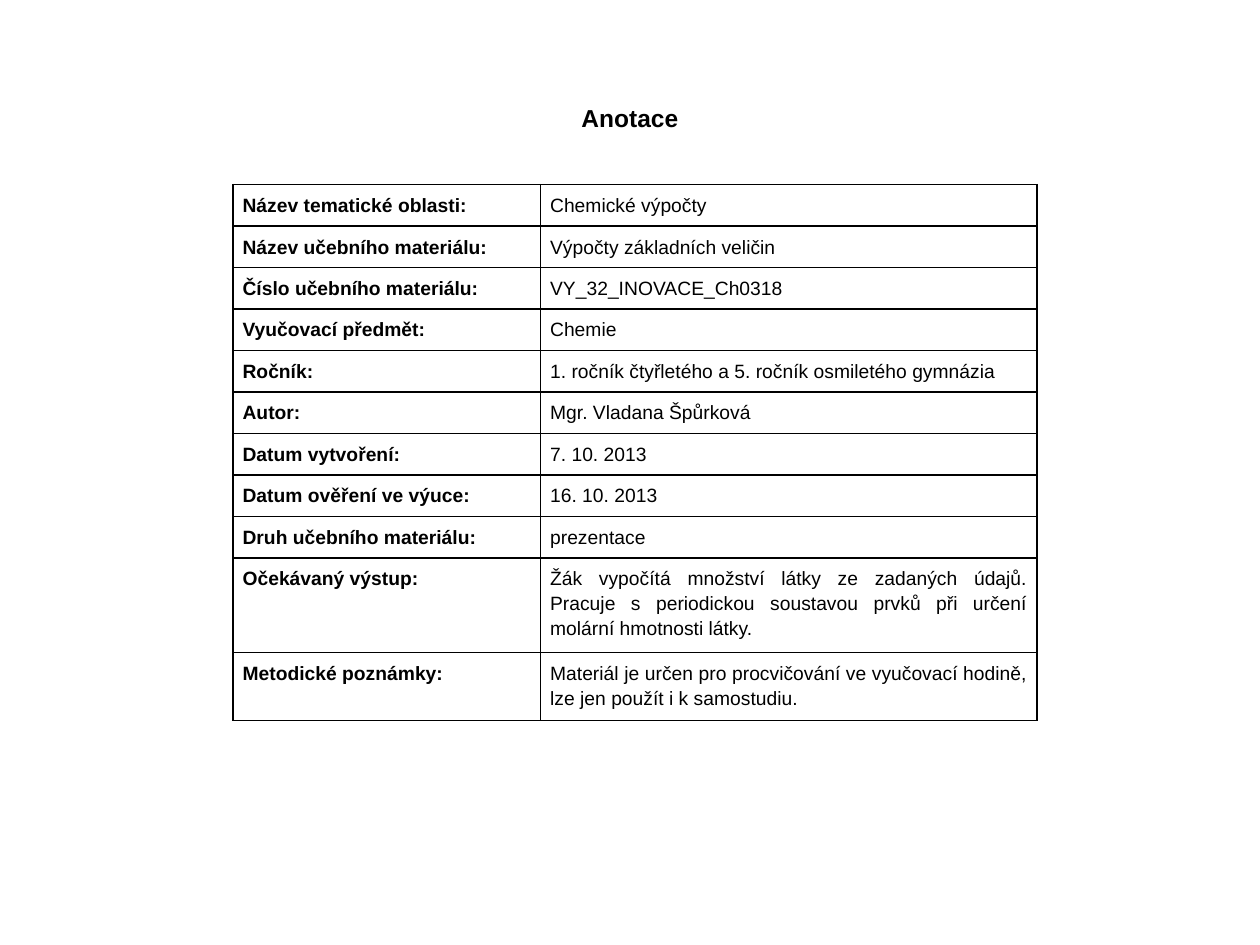
"""Build the annotation slide of a chemistry lesson: a title and a bordered table."""
import pptx
import pptx.dml.color
import pptx.enum.text
import pptx.oxml
import pptx.oxml.ns
import pptx.util

Cm, Pt = pptx.util.Cm, pptx.util.Pt
ALIGN, ANCHOR = pptx.enum.text.PP_ALIGN, pptx.enum.text.MSO_ANCHOR
THEME = {"font": "Arial", "ink": "000000", "title": 14, "body": 11, "border": 1}
ROWS = [
    ("Název tematické oblasti:", "Chemické výpočty", 0.83),
    ("Název učebního materiálu:", "Výpočty základních veličin", 0.83),
    ("Číslo učebního materiálu:", "VY_32_INOVACE_Ch0318", 0.83),
    ("Vyučovací předmět:", "Chemie", 0.83),
    ("Ročník:", "1. ročník čtyřletého a 5. ročník osmiletého gymnázia", 0.83),
    ("Autor:", "Mgr. Vladana Špůrková", 0.83),
    ("Datum vytvoření:", "7. 10. 2013", 0.83),
    ("Datum ověření ve výuce:", "16. 10. 2013", 0.83),
    ("Druh učebního materiálu:", "prezentace", 0.83),
    ("Očekávaný výstup:", "Žák vypočítá množství látky ze zadaných údajů. Pracuje s periodickou "
     "soustavou prvků při určení molární hmotnosti látky.", 1.91),
    ("Metodické poznámky:", "Materiál je určen pro procvičování ve vyučovací hodině, "
     "lze jen použít i k samostudiu.", 1.37),
]


def write(tf, text, *, size, bold=False, align=ALIGN.LEFT, spacing=1.0):
    """Put one formatted paragraph into a text frame."""
    p = tf.paragraphs[0]
    p.alignment, p.line_spacing = align, spacing
    r = p.add_run()
    r.text = text
    r.font.name, r.font.size, r.font.bold = THEME["font"], Pt(size), bold
    r.font.color.rgb = pptx.dml.color.RGBColor.from_string(THEME["ink"])


def add_borders(cell):
    """Draw a solid line on all four sides of a cell."""
    tc_pr = cell.fill._xPr
    for i, side in enumerate(("lnL", "lnR", "lnT", "lnB")):
        tc_pr.insert(i, pptx.oxml.parse_xml(
            f'<a:{side} {pptx.oxml.ns.nsdecls("a")} w="{Pt(THEME["border"])}"><a:solidFill>'
            f'<a:srgbClr val="{THEME["ink"]}"/></a:solidFill></a:{side}>'))


prs = pptx.Presentation()
prs.slide_width, prs.slide_height = Cm(25.4), Cm(19.05)
s = prs.slides.add_slide(prs.slide_layouts[6])

title = s.shapes.add_textbox(0, Cm(1.73), prs.slide_width, Cm(1.27))
title.text_frame.word_wrap = True
title.text_frame.vertical_anchor = ANCHOR.MIDDLE
write(title.text_frame, "Anotace", size=THEME["title"], bold=True, align=ALIGN.CENTER)

heights = [height for *_, height in ROWS]
table = s.shapes.add_table(len(ROWS), 2, Cm(4.7), Cm(3.72), Cm(16.2), Cm(sum(heights))).table
table.first_row = table.horz_banding = False
table.columns[0].width, table.columns[1].width = Cm(6.2), Cm(10)

for row, (label, value, height) in zip(table.rows, ROWS):
    row.height = Cm(height)
    for cell, text, bold, align in zip(row.cells, (label, value), (True, False),
                                       (ALIGN.LEFT, ALIGN.JUSTIFY)):
        cell.margin_left = cell.margin_right = Cm(0.19)
        cell.margin_top = cell.margin_bottom = Cm(0.15)
        cell.fill.background()
        add_borders(cell)
        write(cell.text_frame, text, size=THEME["body"], bold=bold, align=align, spacing=1.15)

prs.save("out.pptx")
